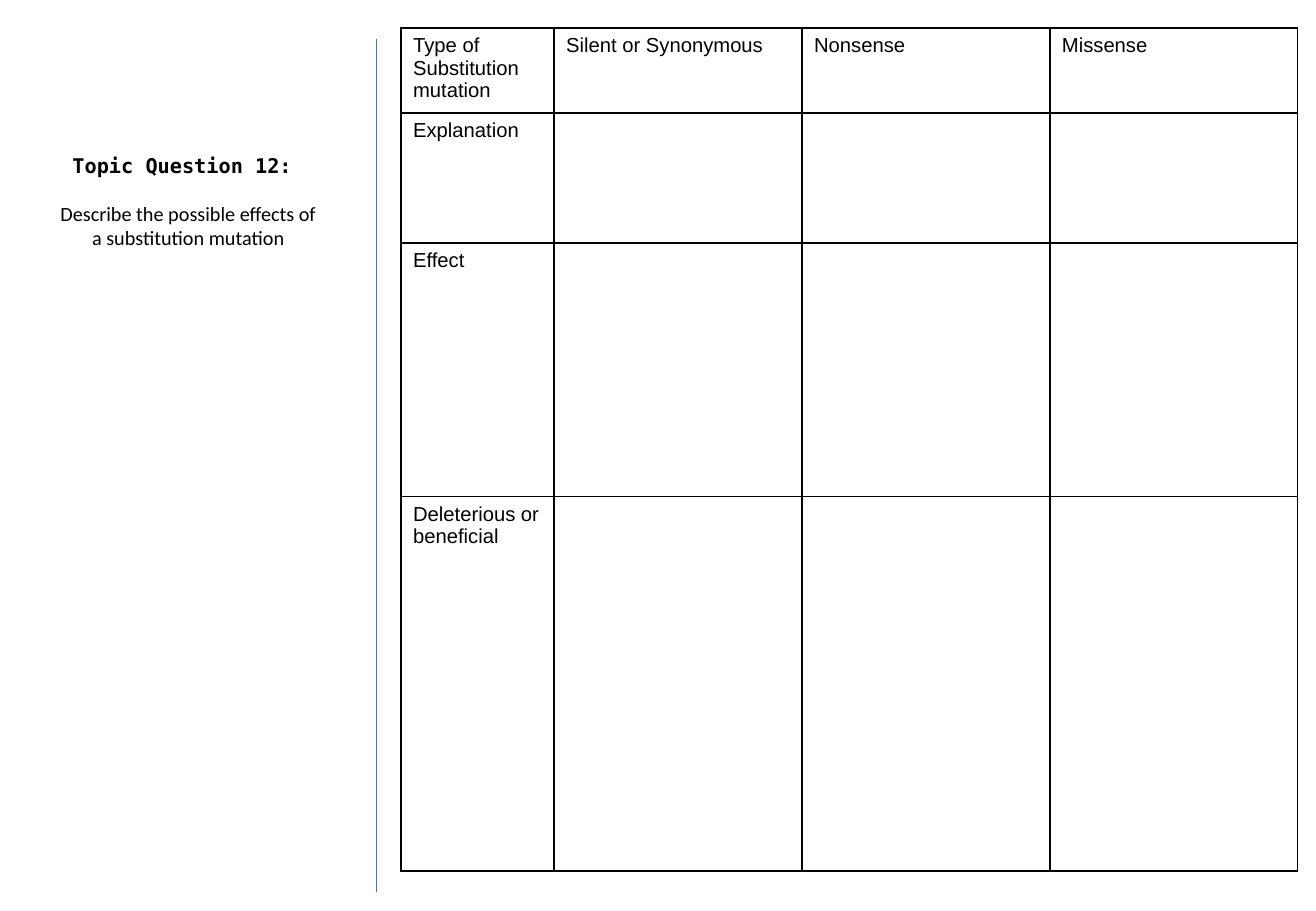
from lxml import etree
from pptx import Presentation
from pptx.dml.color import RGBColor
from pptx.enum.shapes import MSO_CONNECTOR
from pptx.enum.text import MSO_ANCHOR, PP_ALIGN
from pptx.oxml.ns import qn
from pptx.util import Inches, Pt

COLORS = {"text": "000000", "border": "000000", "divider": "4472C4"}


def add_run(para, text, font, bold=False):
    span = para.add_run()
    span.text = text
    span.font.name = font
    span.font.size = Pt(12)
    span.font.bold = bold
    span.font.color.rgb = RGBColor.from_string(COLORS["text"])


def add_borders(cell):
    properties = cell._tc.get_or_add_tcPr()
    for position, side in enumerate(("a:lnL", "a:lnR", "a:lnT", "a:lnB")):
        line = etree.Element(qn(side), w=str(Pt(1)))
        fill = etree.SubElement(line, qn("a:solidFill"))
        etree.SubElement(fill, qn("a:srgbClr"), val=COLORS["border"])
        properties.insert(position, line)


deck = Presentation()
deck.slide_width = Inches(10.83)
deck.slide_height = Inches(7.5)
page = deck.slides.add_slide(deck.slide_layouts[6])

divider = page.shapes.add_connector(
    MSO_CONNECTOR.STRAIGHT, Inches(3.1), Inches(0.32), Inches(3.1), Inches(7.34))
divider.line.color.rgb = RGBColor.from_string(COLORS["divider"])
divider.line.width = Pt(0.75)
etree.SubElement(divider._element.spPr, qn("a:effectLst"))

box = page.shapes.add_textbox(Inches(0.48), Inches(1.26), Inches(2.14), Inches(0.82))
frame = box.text_frame
frame.word_wrap = True
frame.vertical_anchor = MSO_ANCHOR.TOP
frame.margin_left = frame.margin_right = frame.margin_top = frame.margin_bottom = 0
heading = frame.paragraphs[0]
heading.alignment = PP_ALIGN.CENTER
heading.space_after = Pt(14)
add_run(heading, "Topic Question 12: ", "DejaVu Sans Mono", bold=True)
question = frame.add_paragraph()
question.alignment = PP_ALIGN.CENTER
add_run(question, "Describe the possible effects of a substitution mutation", "Calibri")

column_widths = [1.26, 2.04, 2.04, 2.04]
row_heights = [0.66, 1.07, 2.09, 3.08]
mutation_rows = [
    ["Type of Substitution mutation", "Silent or Synonymous", "Nonsense", "Missense"],
    ["Explanation", "", "", ""],
    ["Effect", "", "", ""],
    ["Deleterious or beneficial", "", "", ""],
]
table = page.shapes.add_table(
    len(row_heights), len(column_widths), Inches(3.3), Inches(0.23),
    Inches(sum(column_widths)), Inches(sum(row_heights))).table
table.first_row = False
table.horz_banding = False
for column, width in zip(table.columns, column_widths):
    column.width = Inches(width)
for row, height, labels in zip(table.rows, row_heights, mutation_rows):
    row.height = Inches(height)
    for cell, label in zip(row.cells, labels):
        cell.fill.background()
        add_borders(cell)
        if label:
            add_run(cell.text_frame.paragraphs[0], label, "Arial")

deck.save("out.pptx")
